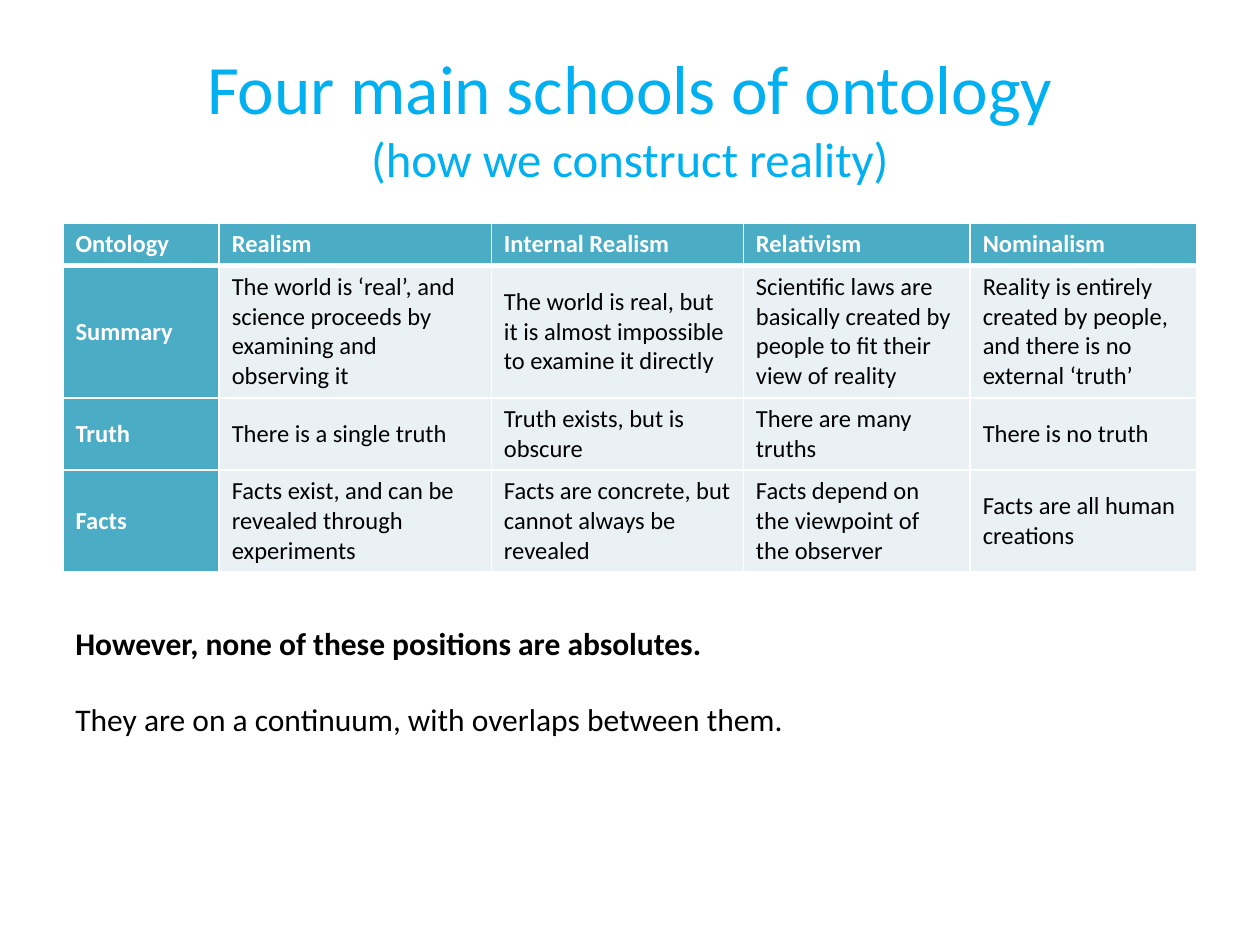
from lxml.etree import SubElement
from pptx import Presentation
from pptx.dml.color import RGBColor
from pptx.enum.text import MSO_ANCHOR, MSO_AUTO_SIZE, PP_ALIGN
from pptx.oxml.ns import qn
from pptx.util import Inches, Pt

HUES = {"title": "00B0F0", "head": "4BACC6", "body": "E9F1F5",
        "white": "FFFFFF", "black": "000000"}
COLS = [1.24, 2.16, 2, 1.8, 1.8]
ROWS = [0.32, 1.05, 0.57, 0.81]
CELLS = [
    ["Ontology", "Realism", "Internal Realism", "Relativism", "Nominalism"],
    ["Summary",
     "The world is ‘real’, and science proceeds by examining and observing it",
     "The world is real, but it is almost impossible to examine it directly",
     "Scientific laws are basically created by people to fit their view of reality",
     "Reality is entirely created by people, and there is no external ‘truth’"],
    ["Truth", "There is a single truth", "Truth exists, but is obscure",
     "There are many truths", "There is no truth"],
    ["Facts", "Facts exist, and can be revealed through experiments",
     "Facts are concrete, but cannot always be revealed",
     "Facts depend on the viewpoint of the observer",
     "Facts are all human creations"],
]


def rgb(hue):
    return RGBColor.from_string(HUES[hue])


def style(run, size, hue, bold=False):
    look = {"name": "Calibri", "size": Pt(size), "bold": bold}
    for key, value in look.items():
        setattr(run.font, key, value)
    run.font.color.rgb = rgb(hue)


def add_run(para, text, size, hue, bold=False):
    run = para.add_run()
    run.text = text
    style(run, size, hue, bold)


def set_frame(frame, anchor):
    look = {"word_wrap": True, "auto_size": MSO_AUTO_SIZE.NONE,
            "vertical_anchor": anchor}
    for key, value in look.items():
        setattr(frame, key, value)


def add_title(slide):
    title = slide.shapes.title
    place = {"left": 0.5, "top": 0.3, "width": 9, "height": 1.25}
    for key, value in place.items():
        setattr(title, key, Inches(value))
    set_frame(title.text_frame, MSO_ANCHOR.MIDDLE)
    para = title.text_frame.paragraphs[0]
    para.alignment = PP_ALIGN.CENTER
    add_run(para, "Four main schools of ontology", 39.6, "title")
    para.add_line_break()
    add_run(para, "(how we construct reality)", 27.9, "title")


def set_edges(cell, widths):
    props = cell._tc.get_or_add_tcPr()
    for side, width in zip("LRTB", widths):
        line = SubElement(props, qn(f"a:ln{side}"), w=str(Pt(width)))
        fill = SubElement(line, qn("a:solidFill"))
        SubElement(fill, qn("a:srgbClr"), val=HUES["white"])


def fill_cell(cell, text, row, col):
    head = row == 0 or col == 0
    # Thick rule between the header row and the body
    set_edges(cell, [1, 1, 3 if row == 1 else 1, 3 if row == 0 else 1])
    cell.fill.solid()
    cell.fill.fore_color.rgb = rgb("head" if head else "body")
    cell.vertical_anchor = MSO_ANCHOR.MIDDLE
    add_run(cell.text_frame.paragraphs[0], text, 14,
            "white" if head else "black", head)


def add_grid(slide):
    frame = slide.shapes.add_table(
        len(ROWS), len(COLS), Inches(0.5), Inches(1.77),
        Inches(sum(COLS)), Inches(sum(ROWS)))
    table = frame.table
    for col, width in zip(table.columns, COLS):
        col.width = Inches(width)
    for row, height in zip(table.rows, ROWS):
        row.height = Inches(height)
    for r, texts in enumerate(CELLS):
        for c, text in enumerate(texts):
            fill_cell(table.cell(r, c), text, r, c)


def add_notes(slide):
    box = slide.shapes.add_textbox(
        Inches(0.5), Inches(4.9), Inches(9), Inches(1.31))
    frame = box.text_frame
    set_frame(frame, MSO_ANCHOR.TOP)
    add_run(frame.paragraphs[0],
            "However, none of these positions are absolutes.", 18, "black", True)
    para = frame.add_paragraph()
    para.space_before = Pt(22)
    add_run(para, "They are on a continuum, with overlaps between them.",
            18, "black")


def main():
    deck = Presentation()
    deck.slide_width, deck.slide_height = Inches(10), Inches(7.5)
    slide = deck.slides.add_slide(deck.slide_layouts[5])
    # Heading, comparison table, closing remarks
    add_title(slide)
    add_grid(slide)
    add_notes(slide)
    deck.save("out.pptx")


if __name__ == "__main__":
    main()
